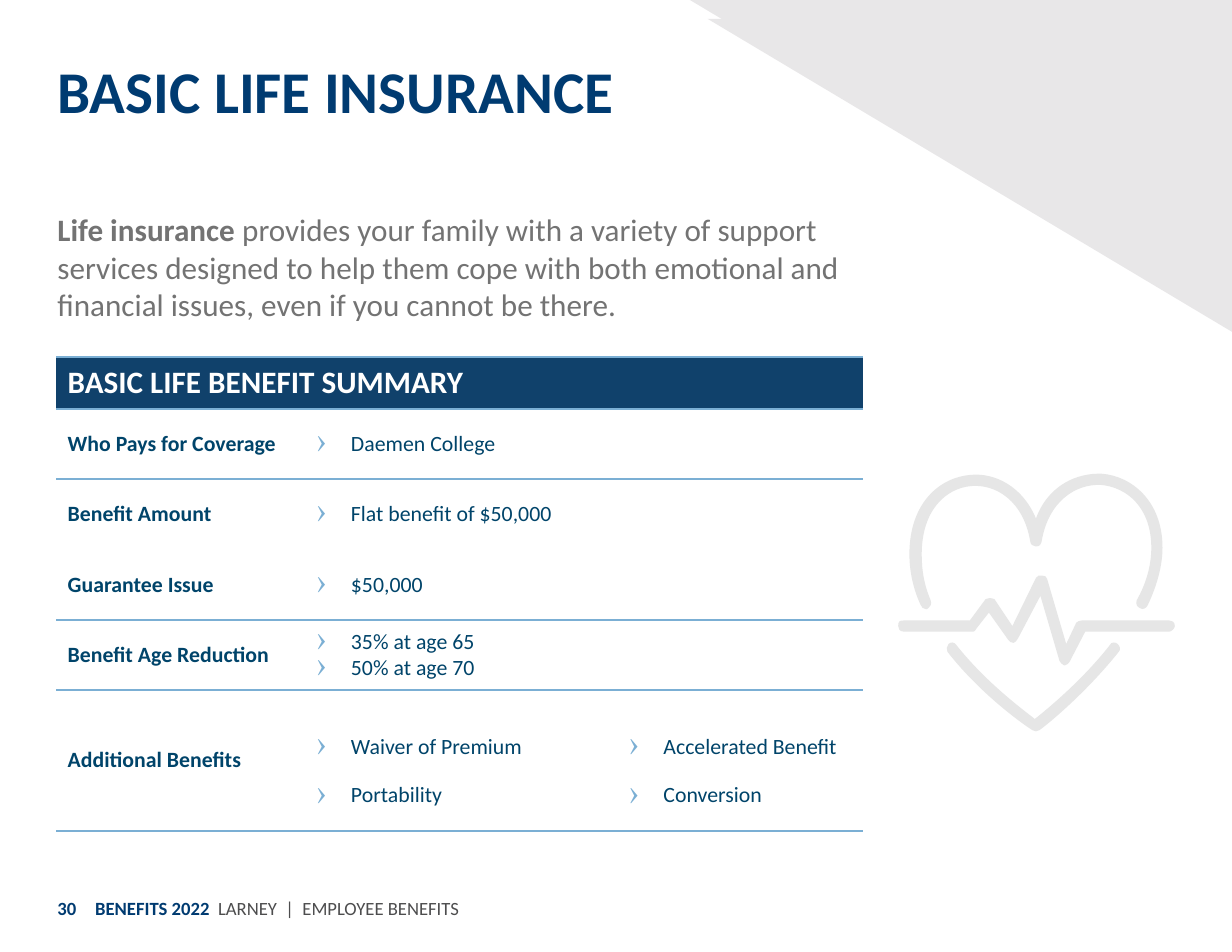
from lxml.etree import SubElement
from pptx import Presentation
from pptx.dml.color import RGBColor
from pptx.enum.shapes import MSO_SHAPE as Shape
from pptx.enum.text import MSO_ANCHOR as Anchor
from pptx.oxml.ns import qn
from pptx.util import Pt

NAVY, BLUE, TEAL, SKY = "003B71", "10416B", "00446A", "7BAFD4"
GREY, CHARCOAL, PALE, SILVER, WHITE = "737373", "4D4D4E", "E8E7E8", "E6E6E6", "FFFFFF"
HUNDREDTH_INCH = 0.72

PULSE = [
    (951, 594), (950, 594, 950, 594, 950, 594), (948, 593, 947, 592, 946, 590),
    (929, 532), (909, 570),
    (908, 572, 906, 574, 905, 574), (903, 574, 901, 573, 900, 571),
    (883, 547), (872, 561), (871, 563, 870, 564, 869, 564), (807, 564),
    (803, 564, 802, 561, 802, 559), (802, 555, 803, 554, 807, 554),
    (866, 554), (880, 535), (881, 535, 882, 534, 884, 534),
    (886, 534, 887, 535, 888, 535), (904, 559), (925, 516),
    (926, 514, 929, 513, 930, 514), (933, 514, 935, 515, 935, 517),
    (952, 575), (961, 556), (962, 555, 964, 554, 966, 554), (1044, 554),
    (1046, 554, 1049, 555, 1049, 559), (1049, 561, 1046, 564, 1044, 564),
    (969, 564), (955, 591), (954, 592, 953, 594, 951, 594),
]
HEART_TOP = [
    (827, 544), (824, 544, 823, 542, 822, 540), (815, 525, 812, 509, 812, 495),
    (812, 448, 840, 426, 867, 424), (888, 422, 913, 434, 925, 463),
    (936, 433, 962, 422, 984, 423), (1010, 425, 1038, 447, 1038, 489),
    (1038, 505, 1033, 523, 1025, 540), (1024, 543, 1020, 545, 1018, 543),
    (1015, 542, 1014, 539, 1015, 536), (1024, 520, 1028, 504, 1028, 489),
    (1028, 453, 1006, 435, 983, 433), (961, 432, 936, 447, 930, 484),
    (930, 486, 928, 488, 925, 488), (923, 488, 920, 486, 920, 484),
    (914, 447, 889, 432, 867, 434), (845, 436, 823, 455, 823, 495),
    (823, 509, 825, 522, 831, 536), (832, 539, 831, 542, 829, 543),
    (828, 544, 827, 544, 827, 544),
]
HEART_TIP = [
    (925, 653), (924, 653, 923, 653, 922, 652), (920, 651, 878, 623, 846, 582),
    (845, 580, 845, 577, 847, 575), (849, 573, 852, 573, 854, 576),
    (881, 610, 914, 634, 924, 642), (934, 634, 966, 608, 991, 576),
    (992, 573, 996, 573, 998, 575), (1000, 577, 1001, 580, 999, 582),
    (967, 622, 930, 651, 928, 652), (927, 653, 926, 653, 925, 653),
]

COLUMN_WIDTHS = (159.8, 200.9, 157.7)
HEADER_HEIGHT, ROW_HEIGHT = 33, 45.2
RULED_ROWS = (-1, 0, 1, 3, 4, 6)
MERGES = [(0, 0, 0, 2), (5, 0, 6, 0)] + [(row, 1, row, 2) for row in range(1, 5)]
LABELS = {1: "Who Pays for Coverage", 2: "Benefit Amount", 3: "Guarantee Issue",
          4: "Benefit Age Reduction", 5: "Additional Benefits"}
DETAILS = {
    (1, 1): ["Daemen College"],
    (2, 1): ["Flat benefit of $50,000"],
    (3, 1): ["$50,000"],
    (4, 1): ["35% at age 65", "50% at age 70"],
    (5, 1): ["Waiver of Premium"],
    (5, 2): ["Accelerated Benefit"],
    (6, 1): ["Portability"],
    (6, 2): ["Conversion"],
}


def colour(value):
    return RGBColor.from_string(value)


class SlideBuilder:
    def __init__(self, slide, font="Calibri"):
        self.slide, self.font = slide, font

    def run(self, paragraph, text, size, value, bold=False):
        run = paragraph.add_run()
        run.text = text
        font = run.font
        font.name, font.size, font.bold = self.font, Pt(size), bold
        font.color.rgb = colour(value)

    def text(self, box, runs, size, anchor=Anchor.TOP, padding=0, spacing=None):
        frame = self.slide.shapes.add_textbox(*map(Pt, box)).text_frame
        frame.word_wrap, frame.vertical_anchor = True, anchor
        frame.margin_left = frame.margin_right = 0
        frame.margin_top = frame.margin_bottom = Pt(padding)
        paragraph = frame.paragraphs[0]
        if spacing:
            paragraph.line_spacing = Pt(spacing)
        for text, value, bold in runs:
            self.run(paragraph, text, size, value, bold)

    def paint(self, shape, value):
        shape.shadow.inherit = False
        shape.fill.solid()
        shape.fill.fore_color.rgb = colour(value)
        shape.line.fill.background()

    def corner(self, box):
        triangle = self.slide.shapes.add_shape(Shape.RIGHT_TRIANGLE, *map(Pt, box))
        self.paint(triangle, PALE)
        xfrm = triangle._element.spPr.xfrm
        xfrm.set("flipH", "1")
        xfrm.set("flipV", "1")

    def outline(self, segments):
        scaled = [[Pt(value * HUNDREDTH_INCH) for value in segment] for segment in segments]
        anchors = [segment[-2:] for segment in scaled]
        builder = self.slide.shapes.build_freeform(*anchors[0], scale=1.0)
        builder.add_line_segments(anchors[1:], close=True)
        shape = builder.convert_to_shape()
        self.paint(shape, SILVER)
        lines = list(shape._element.iter(qn("a:lnTo")))
        for line, segment in zip(lines, scaled[1:]):
            if len(segment) == 6:
                line.getparent().replace(line, self.curve(shape, line, segment))

    def curve(self, shape, line, segment):
        curve = line.makeelement(qn("a:cubicBezTo"))
        for x, y in zip(segment[::2], segment[1::2]):
            SubElement(curve, qn("a:pt"), x=str(x - shape.left), y=str(y - shape.top))
        return curve

    def indent(self, paragraph, left, hanging=0):
        properties = paragraph._p.get_or_add_pPr()
        properties.set("marL", str(Pt(left)))
        properties.set("indent", str(Pt(-hanging)))
        return properties

    def bullet(self, paragraph):
        properties = self.indent(paragraph, 29.5, 22.3)
        tint = SubElement(properties, qn("a:buClr"))
        SubElement(tint, qn("a:srgbClr"), val=SKY)
        SubElement(properties, qn("a:buSzPct"), val="150000")
        SubElement(properties, qn("a:buChar"), char="›")

    def borders(self, cell, ruled):
        for side in ("lnL", "lnR", "lnT", "lnB"):
            line = SubElement(cell._tc.get_or_add_tcPr(), qn(f"a:{side}"), w=str(Pt(1.5)))
            if side in ruled:
                fill = SubElement(line, qn("a:solidFill"))
                SubElement(fill, qn("a:srgbClr"), val=SKY)
            else:
                SubElement(line, qn("a:noFill"))

    def label(self, cell, text, size, value):
        paragraph = cell.text_frame.paragraphs[0]
        self.indent(paragraph, 7.2)
        self.run(paragraph, text, size, value, True)

    def details(self, cell, lines):
        frame = cell.text_frame
        for index, line in enumerate(lines):
            paragraph = frame.add_paragraph() if index else frame.paragraphs[0]
            self.bullet(paragraph)
            self.run(paragraph, line, 14, TEAL)

    def summary_table(self, left, top):
        heights = [HEADER_HEIGHT] + [ROW_HEIGHT] * 6
        table = self.slide.shapes.add_table(
            len(heights), len(COLUMN_WIDTHS), Pt(left), Pt(top),
            Pt(sum(COLUMN_WIDTHS)), Pt(sum(heights))).table
        table.first_row = table.horz_banding = False
        for column, width in zip(table.columns, COLUMN_WIDTHS):
            column.width = Pt(width)
        for row, height in zip(table.rows, heights):
            row.height = Pt(height)
        for top_row, first, bottom_row, last in MERGES:
            table.cell(top_row, first).merge(table.cell(bottom_row, last))
        for row in range(len(heights)):
            for column in range(len(COLUMN_WIDTHS)):
                cell = table.cell(row, column)
                cell.margin_left = cell.margin_right = cell.margin_top = cell.margin_bottom = 0
                raised = row == 5 and column > 0
                cell.vertical_anchor = Anchor.BOTTOM if raised else Anchor.MIDDLE
                bottom_row = row + cell.span_height - 1
                edges = {"lnT": row - 1, "lnB": bottom_row}
                self.borders(cell, [side for side, edge in edges.items() if edge in RULED_ROWS])
                if row == 0:
                    cell.fill.solid()
                    cell.fill.fore_color.rgb = colour(BLUE)
                else:
                    cell.fill.background()
        self.label(table.cell(0, 0), "BASIC LIFE BENEFIT SUMMARY", 20, WHITE)
        for row, text in LABELS.items():
            self.label(table.cell(row, 0), text, 14, TEAL)
        for position, lines in DETAILS.items():
            self.details(table.cell(*position), lines)


def main():
    deck = Presentation()
    deck.slide_width, deck.slide_height = Pt(792), Pt(612)
    page = SlideBuilder(deck.slides.add_slide(deck.slide_layouts[6]))
    for box in ((443.5, 0, 348.5, 208), (455, 12.2, 348.5, 208), (490.3, 12.2, 313.9, 103)):
        page.corner(box)
    page.text((36.9, 38.4, 497.5, 42.5), [("BASIC LIFE INSURANCE", NAVY, True)], 38, spacing=42)
    page.text((36.9, 135.4, 514, 48.2), [
        ("Life insurance ", GREY, True),
        ("provides your family with a variety of support services designed to help them cope "
         "with both emotional and financial issues, even if you cannot be there.", GREY, False),
    ], 20)
    page.summary_table(36.3, 229.8)
    for segments in (PULSE, HEART_TOP, HEART_TIP):
        page.outline(segments)
    page.text((36.9, 567.4, 35.3, 32.4), [("30", NAVY, True)], 12, Anchor.MIDDLE, 3.6)
    page.text((61.2, 567.4, 316, 32.4), [
        ("BENEFITS 2022  ", NAVY, True),
        ("LARNEY  |  EMPLOYEE BENEFITS", CHARCOAL, False),
    ], 12, Anchor.MIDDLE, 3.6)
    deck.save("out.pptx")


if __name__ == "__main__":
    main()
